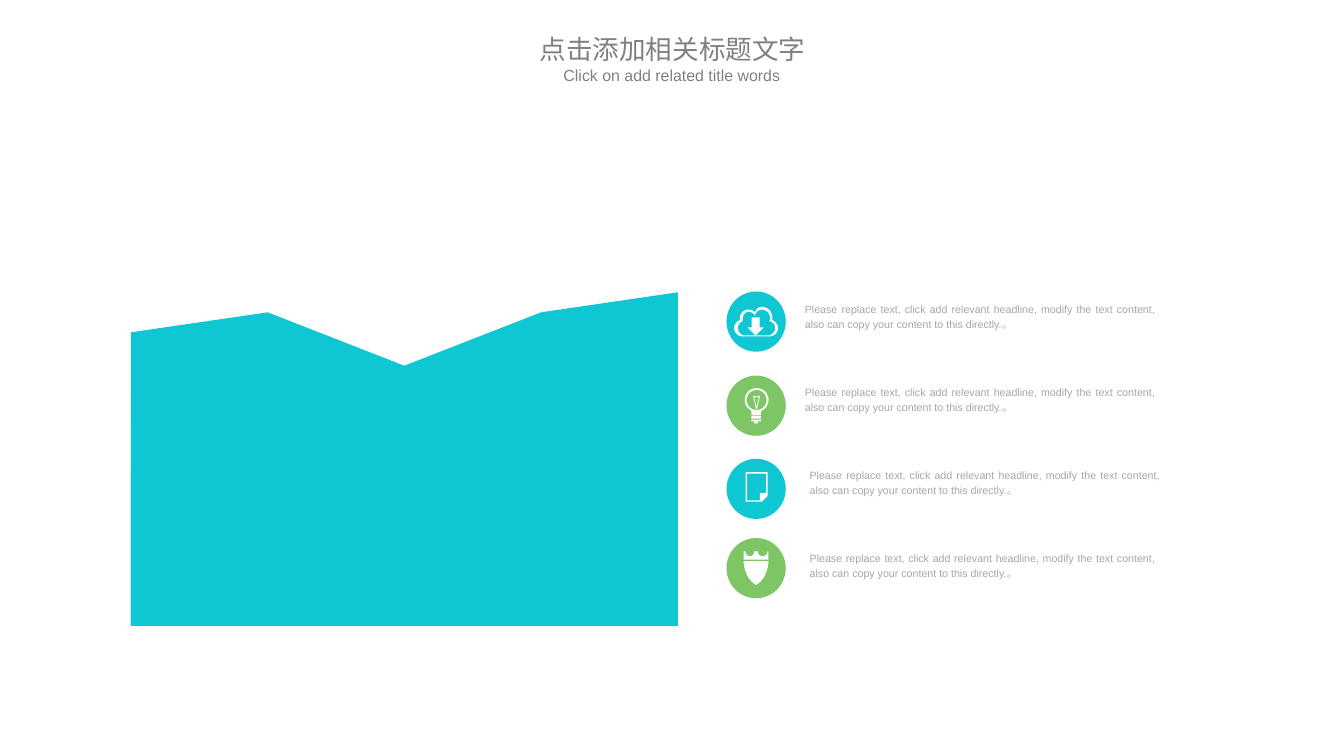
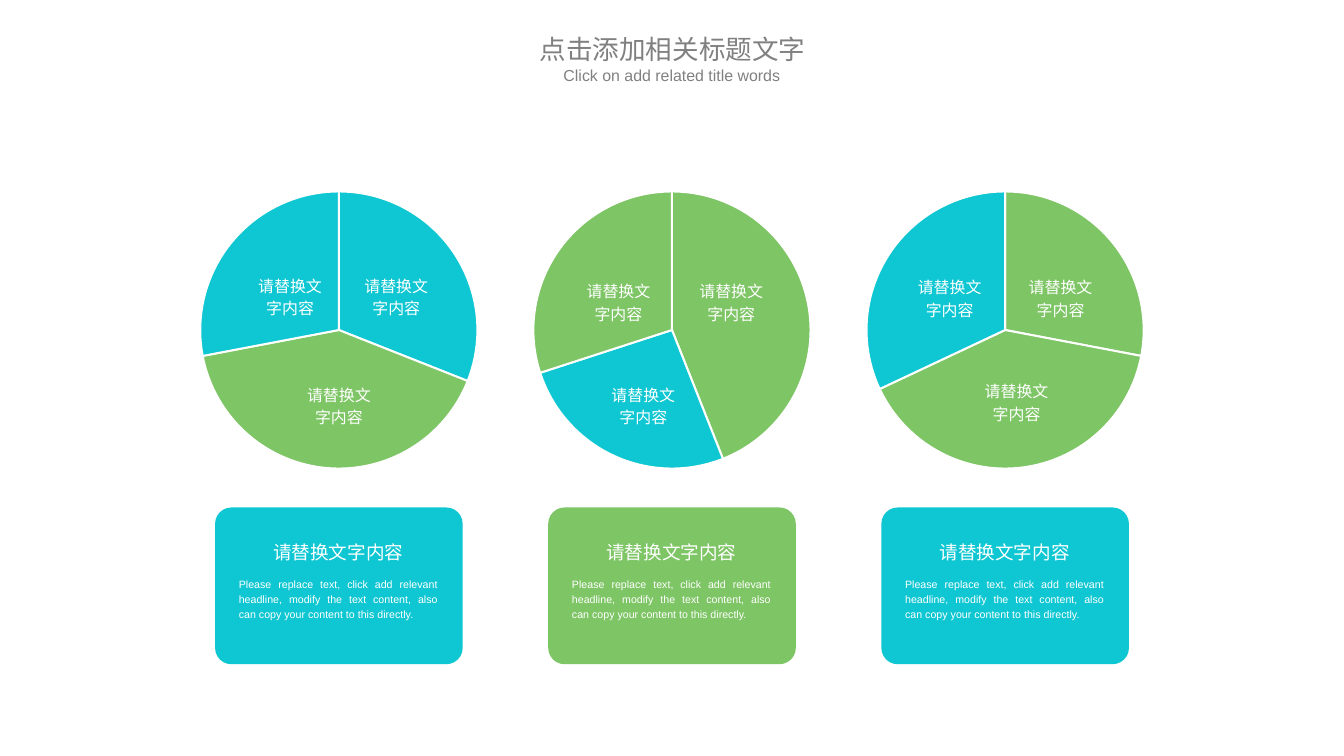
from lxml import etree
from pptx import Presentation
from pptx.chart.data import CategoryChartData
from pptx.dml.color import RGBColor
from pptx.enum import chart as ch, shapes, text
from pptx.oxml import ns
from pptx.util import Inches, Pt

CYAN, GREEN, WHITE = "0FC7D3", "7EC565", "FFFFFF"
TITLE_GREY, BODY_GREY, PALE_GREY = "808080", "A6A6A6", "E7E6E6"
LATIN, CJK = "Arial", "Noto Sans CJK SC"
CENTER, JUSTIFY = text.PP_ALIGN.CENTER, text.PP_ALIGN.JUSTIFY
BLURB = ("Please replace text, click add relevant headline, modify the text "
         "content, also can copy your content to this directly.")
LABEL = "请替换文字内容"


# ---- Shared helpers ----
def paint(part, color):
    part.fill.solid()
    part.fill.fore_color.rgb = RGBColor.from_string(color)


def finish(shape, color):
    paint(shape, color)
    shape.line.fill.background()
    shape.shadow.inherit = False
    return shape


def add_preset(slide, kind, x, y, w, h, color):
    box = map(Inches, (x, y, w, h))
    return finish(slide.shapes.add_shape(kind, *box), color)


def add_text(slide, x, y, w, h, words, size, color, align=CENTER, font=LATIN,
             spacing=1.2, inset=(0.1, 0.05), wrap=True):
    frame = slide.shapes.add_textbox(*map(Inches, (x, y, w, h))).text_frame
    frame.word_wrap = wrap
    frame.margin_left = frame.margin_right = Inches(inset[0])
    frame.margin_top = frame.margin_bottom = Inches(inset[1])
    paragraph = frame.paragraphs[0]
    paragraph.alignment = align
    paragraph.line_spacing = spacing
    run = paragraph.add_run()
    run.text = words
    run.font.size, run.font.name = Pt(size), font
    run.font.color.rgb = RGBColor.from_string(color)
    east_asian = etree.SubElement(run._r.get_or_add_rPr(), ns.qn("a:ea"))
    east_asian.set("typeface", font)
    return paragraph


def add_title(slide):
    for x, y, w, words, size, font in (
            (5.36, 0.29, 3.35, "点击添加相关标题文字", 20, CJK),
            (5.76, 0.64, 2.54, "Click on add related title words", 12, LATIN)):
        paragraph = add_text(slide, x, y, w, 0.41, words, size, TITLE_GREY,
                             font=font, spacing=1.0, inset=(0.11, 0.05))
        paragraph.space_before, paragraph.space_after = Pt(size * 0.2), Pt(6)


def add_chart(slide, kind, box, categories, series, size, plot_box):
    data = CategoryChartData()
    data.categories = categories
    for number, values in enumerate(series, 1):
        data.add_series(f"Series {number}", values)
    chart = slide.shapes.add_chart(kind, *map(Inches, box), data).chart
    chart.has_legend = chart.has_title = False
    chart.font.size, chart.font.name = Pt(size), LATIN
    chart.font.color.rgb = RGBColor.from_string("000000")
    # Fix the inner plot area as fractions of the chart
    area = chart._chartSpace.chart.plotArea
    for old in area.findall(ns.qn("c:layout")):
        area.remove(old)
    layout = etree.Element(ns.qn("c:layout"))
    manual = etree.SubElement(layout, ns.qn("c:manualLayout"))
    settings = [("layoutTarget", "inner"), ("xMode", "edge"), ("yMode", "edge"),
                *zip("xywh", map(str, plot_box))]
    for tag, value in settings:
        etree.SubElement(manual, ns.qn("c:" + tag)).set("val", value)
    area.insert(0, layout)
    return chart


# ---- Icons: outlines in hundredths of an inch, 6 numbers make a curve ----
def flatten(outline, steps=8):
    points = [outline[0]]
    for piece in outline[1:]:
        if len(piece) == 2:
            points.append(piece)
            continue
        start, b, c, end = points[-1], piece[:2], piece[2:4], piece[4:]
        for i in range(1, steps + 1):
            t = i / steps
            s = 1 - t
            points.append(tuple(
                s**3 * start[k] + 3 * s * s * t * b[k]
                + 3 * s * t * t * c[k] + t**3 * end[k] for k in (0, 1)))
    return [(x * 100, y * 100) for x, y in points]


def add_outline(slide, x, y, *outlines):
    builder = None
    for points in map(flatten, outlines):
        if builder is None:
            builder = slide.shapes.build_freeform(*points[0], scale=Inches(1) / 10000)
        else:
            builder.move_to(*points[0])
        builder.add_line_segments(points[1:], close=True)
    finish(builder.convert_to_shape(Inches(x), Inches(y)), WHITE)


def draw_cloud(slide, x, y):
    outer = [(40, 14), (40, 13, 40, 12, 40, 11), (40, 5, 35, 0, 29, 0),
             (23, 0, 22, 6, 22, 6), (22, 6, 19, 2, 13, 3), (9, 4, 6, 8, 6, 12),
             (6, 13, 6, 13, 6, 14), (3, 15, 0, 19, 0, 22), (0, 27, 4, 31, 9, 31),
             (37, 31), (42, 31, 46, 27, 46, 22), (46, 19, 43, 15, 40, 14)]
    inner = [(35, 30), (11, 30), (7, 30, 4, 26, 4, 22), (4, 19, 6, 16, 9, 15),
             (9, 14, 9, 14, 9, 13), (9, 9, 11, 6, 15, 5), (19, 5, 22, 9, 22, 9),
             (22, 9, 23, 3, 29, 3), (34, 3, 38, 7, 38, 13), (38, 13, 37, 14, 37, 15),
             (41, 16, 43, 19, 43, 22), (43, 26, 40, 30, 35, 30)]
    add_outline(slide, x + 0.08, y + 0.16, outer, inner)
    add_preset(slide, shapes.MSO_SHAPE.DOWN_ARROW, x + 0.22, y + 0.27, 0.17, 0.19, WHITE)


def draw_bulb(slide, x, y):
    glass = add_preset(slide, shapes.MSO_SHAPE.DONUT, x + 0.19, y + 0.13, 0.25, 0.25, WHITE)
    glass.adjustments[0] = 0.08
    add_outline(slide, x + 0.28, y + 0.21,
                [(0, 1), (1, 0), (3.5, 1), (6, 0), (7, 1), (4, 14), (3, 14)],
                [(1, 1), (3.5, 2), (6, 1), (3.5, 12)])
    for top, left, w, h in ((0.36, 0.26, 0.1, 0.05), (0.42, 0.26, 0.1, 0.03),
                            (0.46, 0.26, 0.1, 0.02), (0.48, 0.29, 0.04, 0.02)):
        add_preset(slide, shapes.MSO_SHAPE.RECTANGLE, x + left, y + top, w, h, WHITE)


def draw_page(slide, x, y):
    add_outline(slide, x + 0.2, y + 0.14,
                [(0, 0), (0, 31), (17, 31), (23, 25), (23, 0)],
                [(1.5, 29.5), (1.5, 1.5), (21.5, 1.5), (21.5, 22), (15, 22), (15, 29.5)])


def draw_shield(slide, x, y):
    add_outline(slide, x + 0.18, y + 0.14,
                [(0, 0), (2, 0), (2, 3, 4, 5, 7, 5), (9, 5, 11, 3, 11, 0),
                 (15, 0), (15, 3, 17, 5, 20, 5), (23, 5, 25, 3, 25, 0),
                 (26, 0), (26, 8.5), (0, 8.5)])
    add_outline(slide, x + 0.18, y + 0.24,
                [(0, 0), (0, 0, 0, 18, 13, 25), (26, 18, 26, 0, 26, 0)])


# ---- Slide 1: area chart and icon list ----
def add_area(slide, x, y):
    series = [(88, 94, 78, 94, 100), (69, 56, 62, 66, 88),
              (47, 47, 47, 59, 56), (62, 38, 38, 28, 34)]
    chart = add_chart(slide, ch.XL_CHART_TYPE.AREA, (x, y, 5.96, 4), list("12345"),
                      series, 18, (0.02, 0.02, 0.96, 0.96))
    for axis in (chart.category_axis, chart.value_axis):
        axis.has_major_gridlines = False
        axis.visible = False
    chart.value_axis.minimum_scale, chart.value_axis.maximum_scale = 0, 110
    for crossing in chart._chartSpace.iter(ns.qn("c:crossBetween")):
        crossing.set("val", "midCat")
    for layer, color in zip(chart.plots[0].series, (CYAN, PALE_GREY) * 2):
        paint(layer.format, color)
        layer.format.line.fill.background()


def add_icon_row(slide, x, y, color, draw_icon, text_x, text_y, text_w):
    add_preset(slide, shapes.MSO_SHAPE.OVAL, x, y, 0.62, 0.63, color)
    draw_icon(slide, x, y)
    add_text(slide, x + text_x, text_y, text_w, 0.38, BLURB + "。", 8, BODY_GREY,
             align=JUSTIFY, inset=(0.05, 0.03))


def build_area_slide(slide):
    add_area(slide, 1.25, 2.63)
    rows = [(3.05, CYAN, draw_cloud, 0.77, 3.77), (3.93, GREEN, draw_bulb, 0.77, 3.77),
            (4.8, CYAN, draw_page, 0.82, 3.77), (5.63, GREEN, draw_shield, 0.82, 3.72)]
    for i, (y, color, icon, text_x, text_w) in enumerate(rows):
        add_icon_row(slide, 7.6, y, color, icon, text_x, 3.11 + 0.87 * i, text_w)
    add_title(slide)


# ---- Slide 2: three pies with cards ----
def add_pie(slide, x, y, values, colors, labels):
    chart = add_chart(slide, ch.XL_CHART_TYPE.PIE, (x, y, 3.69, 3.19), list("1234"),
                      [(*values, None)], 10, (0.107, 0.045, 0.786, 0.909))
    chart.plots[0].vary_by_categories = True
    for i, color in enumerate((*colors, GREEN)):
        wedge = chart.plots[0].series[0].points[i].format
        paint(wedge, color)
        wedge.line.color.rgb = RGBColor.from_string(WHITE)
        wedge.line.width = Pt(1.5)
    for dx, dy in labels:
        add_text(slide, x + dx, y + dy, 0.95, 0.59, LABEL, 12, WHITE)


def add_card(slide, x, y, color):
    card = add_preset(slide, shapes.MSO_SHAPE.ROUNDED_RECTANGLE, x, y, 2.59, 1.64, color)
    card.adjustments[0] = 0.104
    add_text(slide, x + 0.15, y + 0.66, 2.28, 0.57, BLURB, 8, WHITE, align=JUSTIFY)
    add_text(slide, x + 0.5, y + 0.25, 1.58, 0.36, LABEL, 14, WHITE, wrap=False)


def build_pie_slide(slide):
    columns = [
        ((31, 41, 28), (CYAN, GREEN, CYAN), CYAN,
         ((0.86, 0.94), (1.97, 0.94), (1.37, 2.08))),
        ((44, 26, 30), (GREEN, CYAN, GREEN), GREEN,
         ((1.99, 1.0), (0.81, 1.0), (1.07, 2.08))),
        ((28, 40, 32), (GREEN, GREEN, CYAN), CYAN,
         ((0.79, 0.96), (1.95, 0.96), (1.49, 2.04)))]
    for i, (values, colors, card_color, labels) in enumerate(columns):
        x = 1.7 + 3.485 * i
        add_pie(slide, x, 1.86, values, colors, labels)
        add_card(slide, x + 0.55, 5.31, card_color)
    add_title(slide)


def main():
    deck = Presentation()
    deck.slide_width, deck.slide_height = Inches(14.06), Inches(7.91)
    for build in (build_area_slide, build_pie_slide):
        build(deck.slides.add_slide(deck.slide_layouts[6]))
    deck.save("out.pptx")


if __name__ == "__main__":
    main()
